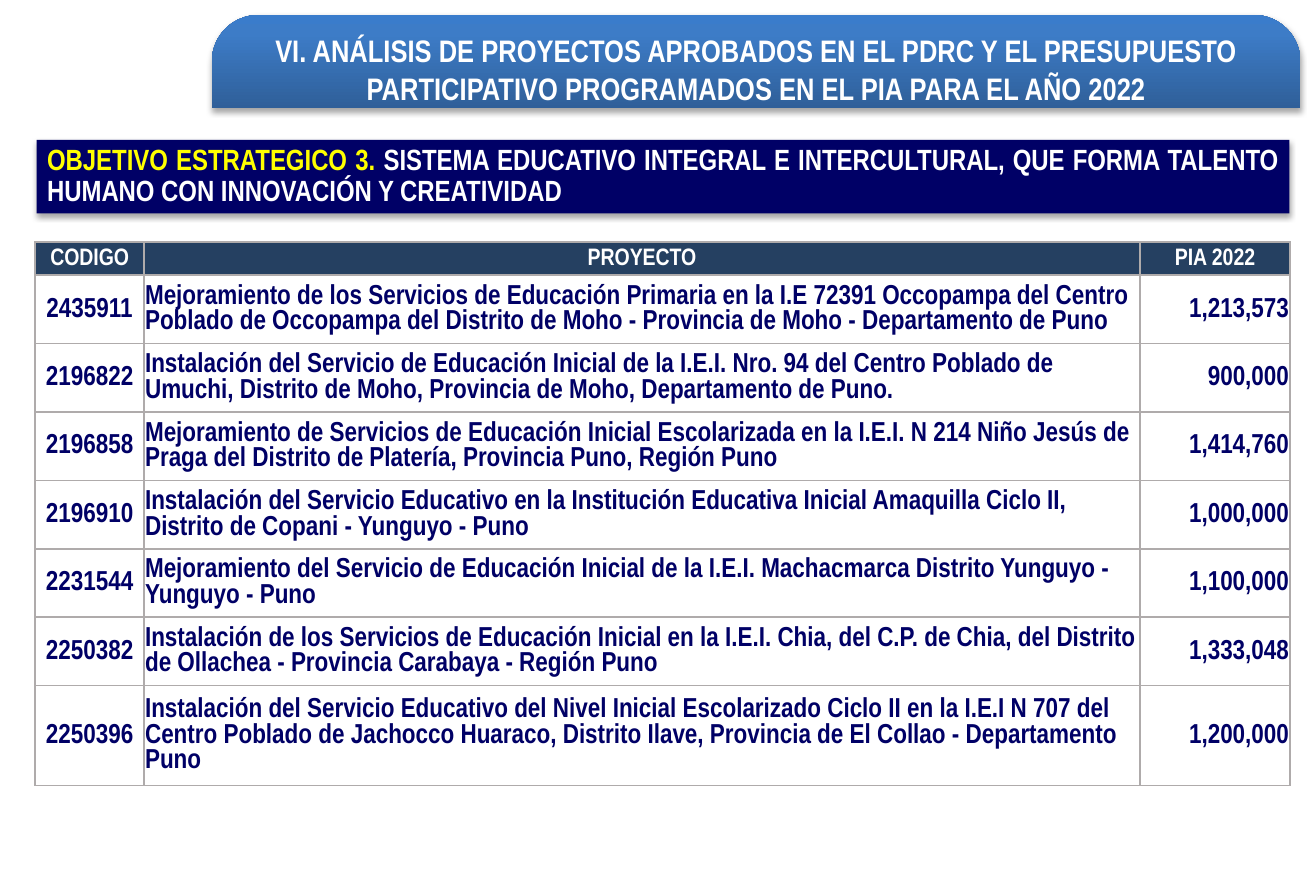
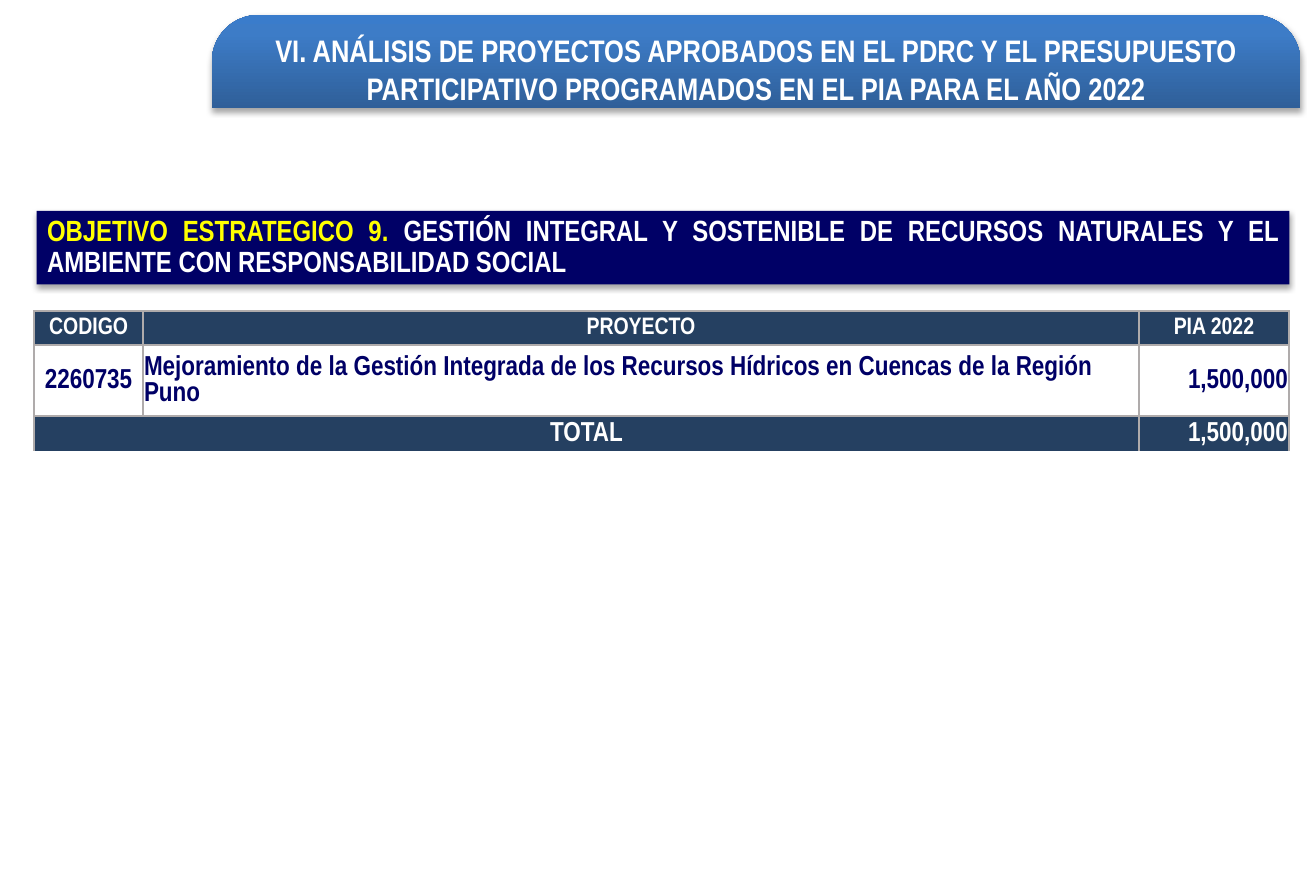
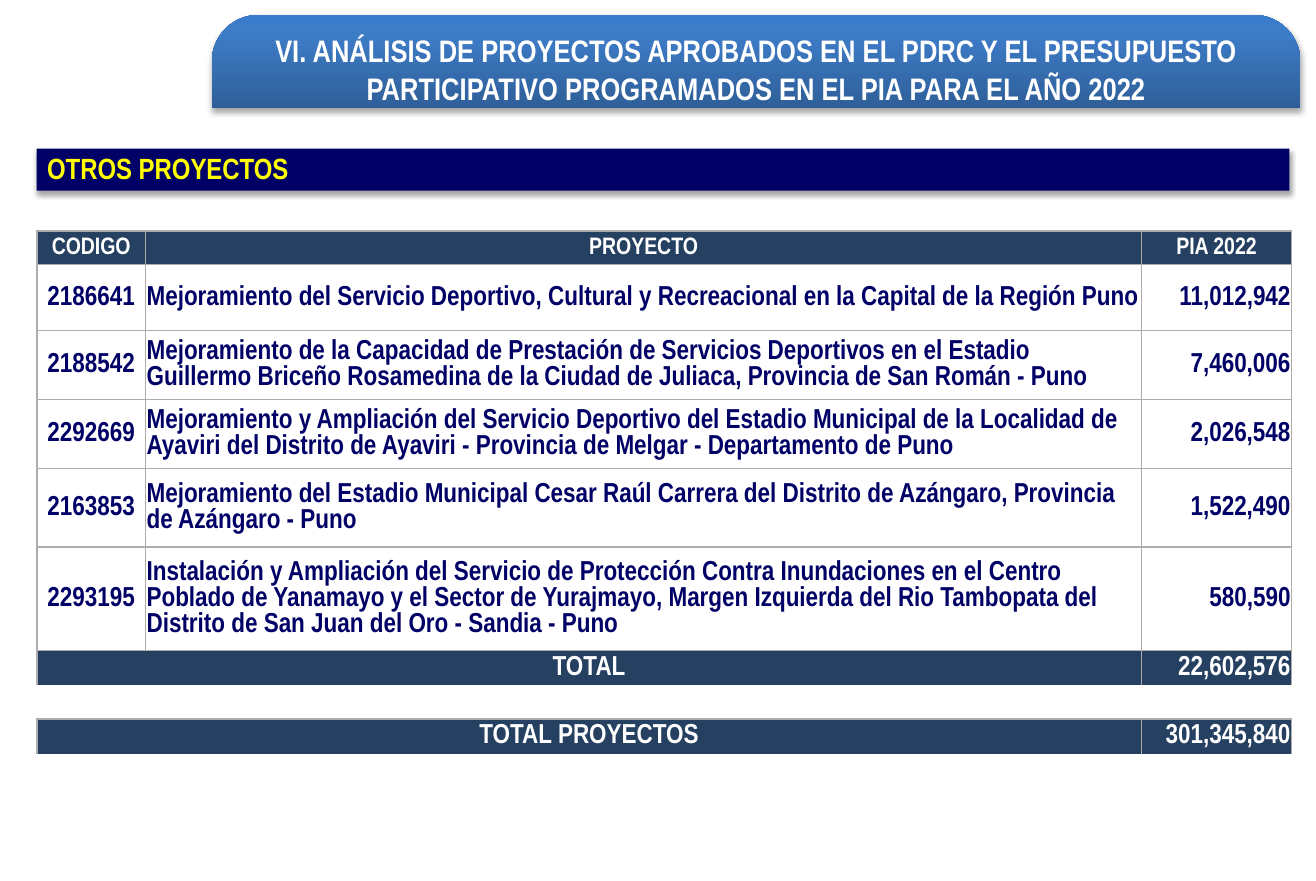
from lxml.etree import SubElement
from pptx import Presentation
from pptx.dml.color import RGBColor
from pptx.enum.shapes import MSO_SHAPE
from pptx.enum.text import MSO_ANCHOR, MSO_AUTO_SIZE, PP_ALIGN
from pptx.oxml import parse_xml
from pptx.oxml.ns import nsdecls, qn
from pptx.util import Cm, Pt

# Shared style
FONT = "Arial Narrow"
NAVY, HEADER, GRID = "000066", "254061", "AFABAB"
WHITE, YELLOW = "FFFFFF", "FFFF00"
TITLE = ("VI. ANÁLISIS DE PROYECTOS APROBADOS EN EL PDRC Y EL PRESUPUESTO "
         "PARTICIPATIVO PROGRAMADOS EN EL PIA PARA EL AÑO 2022")
TITLE_BOX = {"left": Cm(4.09), "top": Cm(0.29), "width": Cm(21.01), "height": Cm(1.8)}
TITLE_STOPS = [(0, "2F5F99"), (80, "3D7CC7"), (100, "3A7CCB")]
HEADINGS = ("CODIGO", "PROYECTO", "PIA 2022")
COLUMNS = (2.1, 19.22, 2.9)
ALIGNS = (PP_ALIGN.CENTER, PP_ALIGN.LEFT, PP_ALIGN.RIGHT)
NO_STYLE = "{2D5ABB26-0587-4C30-8999-92F81FD0307C}"

# Slide contents: rows are (height, code, project, amount);
# a row without a code is a total, a row with only a height is a gap
EDUCATION = [
    (1.32, "2435911", "Mejoramiento de los Servicios de Educación Primaria en la I.E 72391 "
     "Occopampa del Centro Poblado de Occopampa del Distrito de Moho - Provincia de Moho - "
     "Departamento de Puno", "1,213,573"),
    (1.32, "2196822", "Instalación del Servicio de Educación Inicial de la I.E.I. Nro. 94 del "
     "Centro Poblado de Umuchi, Distrito de Moho, Provincia de Moho, Departamento de Puno.",
     "900,000"),
    (1.32, "2196858", "Mejoramiento de Servicios de Educación Inicial Escolarizada en la I.E.I. "
     "N 214 Niño Jesús de Praga del Distrito de Platería, Provincia Puno, Región Puno",
     "1,414,760"),
    (1.32, "2196910", "Instalación del Servicio Educativo en la Institución Educativa Inicial "
     "Amaquilla Ciclo II, Distrito de Copani - Yunguyo - Puno", "1,000,000"),
    (1.32, "2231544", "Mejoramiento del Servicio de Educación Inicial de la I.E.I. Machacmarca "
     "Distrito Yunguyo - Yunguyo - Puno", "1,100,000"),
    (1.32, "2250382", "Instalación de los Servicios de Educación Inicial en la I.E.I. Chia, del "
     "C.P. de Chia, del Distrito de Ollachea - Provincia Carabaya - Región Puno", "1,333,048"),
    (1.93, "2250396", "Instalación del Servicio Educativo del Nivel Inicial Escolarizado Ciclo "
     "II en la I.E.I N 707 del Centro Poblado de Jachocco Huaraco, Distrito Ilave, Provincia "
     "de El Collao - Departamento Puno", "1,200,000"),
]
ENVIRONMENT = [
    (1.37, "2260735", "Mejoramiento de la Gestión Integrada de los Recursos Hídricos en Cuencas "
     "de la Región Puno", "1,500,000"),
    (0.67, "", "TOTAL", "1,500,000"),
]
OTHERS = [
    (1.28, "2186641", "Mejoramiento del Servicio Deportivo, Cultural y Recreacional en la "
     "Capital de la Región Puno", "11,012,942"),
    (1.33, "2188542", "Mejoramiento de la Capacidad de Prestación de Servicios Deportivos en el "
     "Estadio Guillermo Briceño Rosamedina de la Ciudad de Juliaca, Provincia de San Román - "
     "Puno", "7,460,006"),
    (1.33, "2292669", "Mejoramiento y Ampliación del Servicio Deportivo del Estadio Municipal "
     "de la Localidad de Ayaviri del Distrito de Ayaviri - Provincia de Melgar - Departamento "
     "de Puno", "2,026,548"),
    (1.52, "2163853", "Mejoramiento del Estadio Municipal Cesar Raúl Carrera del Distrito de "
     "Azángaro, Provincia de Azángaro - Puno", "1,522,490"),
    (1.99, "2293195", "Instalación y Ampliación del Servicio de Protección Contra Inundaciones "
     "en el Centro Poblado de Yanamayo y el Sector de Yurajmayo, Margen Izquierda del Rio "
     "Tambopata del Distrito de San Juan del Oro - Sandia - Puno", "580,590"),
    (0.66, "", "TOTAL", "22,602,576"),
    (0.66,),
    (0.67, "", "TOTAL PROYECTOS", "301,345,840"),
]


def rgb(value):
    return RGBColor.from_string(value)


def set_attrs(target, **values):
    for name, value in values.items():
        setattr(target, name, value)


def add_run(p, text, size, color):
    r = p.add_run()
    r.text = text
    set_attrs(r.font, name=FONT, size=Pt(size), bold=True)
    r.font.color.rgb = rgb(color)


def add_shadow(sp):
    sp._element.spPr.append(parse_xml(
        f'<a:effectLst {nsdecls("a")}><a:outerShdw blurRad="39370" dist="22860" '
        'dir="5400000" rotWithShape="0"><a:srgbClr val="000000"><a:alpha val="35000"/>'
        '</a:srgbClr></a:outerShdw></a:effectLst>'))


# Gradient panel with rounded top corners, placed behind the title
def add_title_panel(s):
    sp = s.shapes.add_shape(MSO_SHAPE.ROUND_2_SAME_RECTANGLE, *TITLE_BOX.values())
    sp.adjustments[0] = 0.5
    sp.adjustments[1] = 0
    stops = "".join(f'<a:gs pos="{pos * 1000}"><a:srgbClr val="{color}"/></a:gs>'
                    for pos, color in TITLE_STOPS)
    sp._element.spPr.append(parse_xml(
        f'<a:gradFill {nsdecls("a")} rotWithShape="1"><a:gsLst>{stops}</a:gsLst>'
        '<a:lin ang="16200000" scaled="0"/></a:gradFill>'))
    sp.line.fill.background()
    add_shadow(sp)
    s.shapes.title._element.addprevious(sp._element)


# Title placeholder over its panel
def add_title(s):
    add_title_panel(s)
    sp = s.shapes.title
    set_attrs(sp, **TITLE_BOX)
    tf = sp.text_frame
    set_attrs(tf, word_wrap=True, auto_size=MSO_AUTO_SIZE.NONE,
              vertical_anchor=MSO_ANCHOR.MIDDLE, margin_top=Cm(0.28), margin_bottom=0)
    p = tf.paragraphs[0]
    p.alignment = PP_ALIGN.CENTER
    add_run(p, TITLE, 17, WHITE)


# Navy band with a yellow lead and white text
def add_band(s, top, height, lead, text):
    sp = s.shapes.add_shape(MSO_SHAPE.RECTANGLE, Cm(0.71), Cm(top), Cm(24.18), Cm(height))
    sp.fill.solid()
    sp.fill.fore_color.rgb = rgb(NAVY)
    sp.line.fill.background()
    add_shadow(sp)
    tf = sp.text_frame
    set_attrs(tf, word_wrap=True, vertical_anchor=MSO_ANCHOR.TOP, margin_left=Cm(0.2),
              margin_right=Cm(0.2), margin_top=Cm(0.1), margin_bottom=Cm(0.1))
    p = tf.paragraphs[0]
    set_attrs(p, alignment=PP_ALIGN.JUSTIFY, line_spacing=0.9)
    add_run(p, lead, 16, YELLOW)
    if text:
        add_run(p, text, 16, WHITE)


def set_borders(cell, sides):
    tcPr = cell._tc.get_or_add_tcPr()
    for side in "LRTB":
        ln = SubElement(tcPr, qn(f"a:ln{side}"), w=str(Pt(1)))
        if side in sides:
            fill = SubElement(ln, qn("a:solidFill"))
            SubElement(fill, qn("a:srgbClr"), val=GRID)
        else:
            SubElement(ln, qn("a:noFill"))


def fill_cell(cell, text, size, color, fill, align):
    cell.fill.solid()
    cell.fill.fore_color.rgb = rgb(fill)
    p = cell.text_frame.paragraphs[0]
    p.alignment = align
    add_run(p, text, size, color)


# Project table: heading row, projects, totals and gaps
def add_projects(s, left, top, heading_height, rows):
    heights = [heading_height] + [row[0] for row in rows]
    frame = s.shapes.add_table(len(heights), len(COLUMNS), Cm(left), Cm(top),
                               Cm(sum(COLUMNS)), Cm(sum(heights)))
    table = frame.table
    set_attrs(table, first_row=False, horz_banding=False)
    table._tbl.tblPr.find(qn("a:tableStyleId")).text = NO_STYLE
    for column, width in zip(table.columns, COLUMNS):
        column.width = Cm(width)
    for row, height in zip(table.rows, heights):
        row.height = Cm(height)

    for i, values in enumerate([HEADINGS] + [row[1:] for row in rows]):
        cells = list(table.rows[i].cells)
        is_total = bool(values) and not values[0]
        sides = "B" if not values else "LRT" if is_total else "LRTB"
        for cell in cells:
            set_borders(cell, sides)
            set_attrs(cell, vertical_anchor=MSO_ANCHOR.MIDDLE, margin_left=Cm(0.02),
                      margin_right=Cm(0.02), margin_top=Cm(0.02), margin_bottom=0)
        if not values:
            for cell in cells:
                cell.text_frame.paragraphs[0]._p.get_or_add_endParaRPr().set("sz", "1000")
        elif is_total:
            cells[0].merge(cells[1])
            fill_cell(cells[0], values[1], 15, WHITE, HEADER, PP_ALIGN.CENTER)
            fill_cell(cells[2], values[2], 15, WHITE, HEADER, PP_ALIGN.RIGHT)
        elif i == 0:
            for cell, text in zip(cells, values):
                fill_cell(cell, text, 13, WHITE, HEADER, PP_ALIGN.CENTER)
        else:
            for cell, text, align in zip(cells, values, ALIGNS):
                fill_cell(cell, text, 15, NAVY, WHITE, align)


def add_slide(prs, band, table):
    s = prs.slides.add_slide(prs.slide_layouts[5])
    add_title(s)
    add_band(s, *band)
    add_projects(s, *table)


def main():
    prs = Presentation()
    set_attrs(prs, slide_width=Cm(25.4), slide_height=Cm(17))
    add_slide(prs, (2.7, 1.42, "OBJETIVO ESTRATEGICO 3. ",
                    "SISTEMA EDUCATIVO INTEGRAL E INTERCULTURAL, QUE FORMA TALENTO HUMANO "
                    "CON INNOVACIÓN Y CREATIVIDAD"),
              (0.68, 4.67, 0.64, EDUCATION))
    add_slide(prs, (4.07, 1.42, "OBJETIVO ESTRATEGICO 9. ",
                    "GESTIÓN INTEGRAL Y SOSTENIBLE DE RECURSOS NATURALES Y EL AMBIENTE CON "
                    "RESPONSABILIDAD SOCIAL"),
              (0.66, 6, 0.66, ENVIRONMENT))
    add_slide(prs, (2.87, 0.81, "OTROS PROYECTOS", ""), (0.71, 4.46, 0.64, OTHERS))
    prs.save("out.pptx")


if __name__ == "__main__":
    main()
